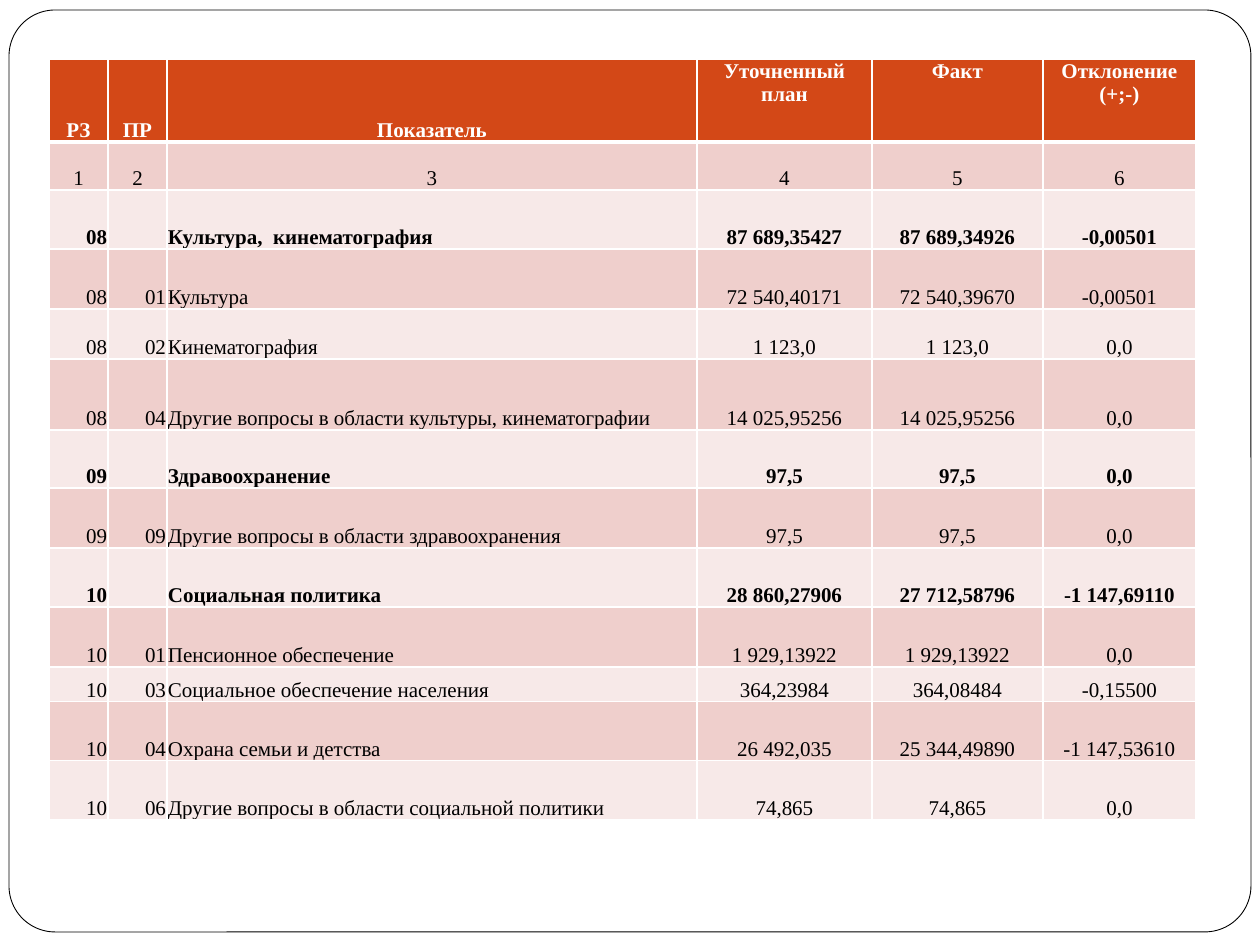
from dataclasses import dataclass

from lxml.etree import SubElement
from pptx import Presentation
from pptx.dml.color import RGBColor
from pptx.enum.shapes import MSO_SHAPE
from pptx.enum.text import MSO_ANCHOR, PP_ALIGN
from pptx.oxml.ns import qn
from pptx.util import Emu, Pt

HEADER = ("РЗ", "ПР", "Показатель", "Уточненный план", "Факт", "Отклонение (+;-)")
NUMBERS = ("1", "2", "3", "4", "5", "6")
BUDGET = (
    ("08", "", "Культура,  кинематография", "87 689,35427", "87 689,34926", "-0,00501"),
    ("08", "01", "Культура", "72 540,40171", "72 540,39670", "-0,00501"),
    ("08", "02", "Кинематография", "1 123,0", "1 123,0", "0,0"),
    ("08", "04", "Другие вопросы в области культуры, кинематографии",
     "14 025,95256", "14 025,95256", "0,0"),
    ("09", "", "Здравоохранение", "97,5", "97,5", "0,0"),
    ("09", "09", "Другие вопросы в области здравоохранения", "97,5", "97,5", "0,0"),
    ("10", "", "Социальная политика", "28 860,27906", "27 712,58796", "-1 147,69110"),
    ("10", "01", "Пенсионное обеспечение", "1 929,13922", "1 929,13922", "0,0"),
    ("10", "03", "Социальное обеспечение населения", "364,23984", "364,08484", "-0,15500"),
    ("10", "04", "Охрана семьи и детства", "26 492,035", "25 344,49890", "-1 147,53610"),
    ("10", "06", "Другие вопросы в области социальной политики", "74,865", "74,865", "0,0"),
)
COL_WIDTHS = (59, 59, 530, 175, 171, 153)
ROW_HEIGHTS = (83, 48, 59, 60, 50, 71, 58, 60, 59, 60, 35, 59, 59)
COL_ALIGN = (PP_ALIGN.RIGHT,) * 2 + (PP_ALIGN.LEFT,) + (PP_ALIGN.CENTER,) * 3


@dataclass(frozen=True)
class Theme:
    """Colours, font and sizes of the slide."""
    font: str = "Times New Roman"
    size: int = 12
    white: str = "FFFFFF"
    black: str = "000000"
    header: str = "D34817"
    bands: tuple = ("F7E9E8", "EFCFCC")
    frame_line: float = 0.5
    rule: int = 1
    header_rule: int = 3


def px(n):
    """Turn pixels into EMU."""
    return Emu(round(n * 914400 / 126))


class Deck:
    """Hold the theme and the current slide, and draw its elements."""

    def __init__(self, prs, theme):
        """Add a blank slide."""
        self.theme = theme
        self.s = prs.slides.add_slide(prs.slide_layouts[6])

    def frame(self, x, y, w, h):
        """Draw the rounded border of the slide."""
        sp = self.s.shapes.add_shape(MSO_SHAPE.ROUNDED_RECTANGLE, px(x), px(y), px(w), px(h))
        sp.adjustments[0] = 0.05
        sp.shadow.inherit = False
        sp.fill.solid()
        sp.fill.fore_color.rgb = RGBColor.from_string(self.theme.white)
        sp.line.color.rgb = RGBColor.from_string(self.theme.black)
        sp.line.width = Pt(self.theme.frame_line)

    def table(self, x, y, widths, heights, rows):
        """Draw the budget table."""
        tbl = self.s.shapes.add_table(len(rows), len(widths), px(x), px(y),
                                      px(sum(widths)), px(sum(heights))).table
        for col, w in zip(tbl.columns, widths):
            col.width = px(w)
        for row, h in zip(tbl.rows, heights):
            row.height = px(h)
        for i, values in enumerate(rows):
            for j, text in enumerate(values):
                self.cell(tbl.cell(i, j), i, j, text, bold=i == 0 or not values[1])

    def cell(self, cell, i, j, text, bold):
        """Fill and format one cell by its row and column."""
        t = self.theme
        head = i == 0
        top = head and j >= 3
        style = {"margin_left": px(1), "margin_right": px(1), "margin_top": px(1),
                 "margin_bottom": 0,
                 "vertical_anchor": MSO_ANCHOR.TOP if top else MSO_ANCHOR.BOTTOM}
        for name, value in style.items():
            setattr(cell, name, value)
        cell.fill.solid()
        cell.fill.fore_color.rgb = RGBColor.from_string(t.header if head else t.bands[i % 2])
        self.borders(cell, t.header_rule if i == 1 else t.rule, t.header_rule if head else t.rule)
        if text:
            p = cell.text_frame.paragraphs[0]
            p.alignment = PP_ALIGN.CENTER if i < 2 else COL_ALIGN[j]
            r = p.add_run()
            r.text = text
            for name, value in {"name": t.font, "size": Pt(t.size), "bold": bold}.items():
                setattr(r.font, name, value)
            r.font.color.rgb = RGBColor.from_string(t.white if head else t.black)

    def borders(self, cell, top, bottom):
        """Set white cell borders, placed ahead of the fill."""
        tc_pr = cell._tc.get_or_add_tcPr()
        weights = {"a:lnL": self.theme.rule, "a:lnR": self.theme.rule,
                   "a:lnT": top, "a:lnB": bottom}
        for k, (tag, weight) in enumerate(weights.items()):
            ln = SubElement(tc_pr, qn(tag), w=str(Pt(weight)))
            SubElement(SubElement(ln, qn("a:solidFill")), qn("a:srgbClr"), val=self.theme.white)
            tc_pr.insert(k, ln)


def main():
    """Build the slide and save it."""
    prs = Presentation()
    prs.slide_width, prs.slide_height = px(1260), px(945)
    deck = Deck(prs, Theme())
    deck.frame(9, 10, 1242, 922)
    deck.table(49, 59, COL_WIDTHS, ROW_HEIGHTS, (HEADER, NUMBERS) + BUDGET)
    prs.save("out.pptx")


if __name__ == "__main__":
    main()
